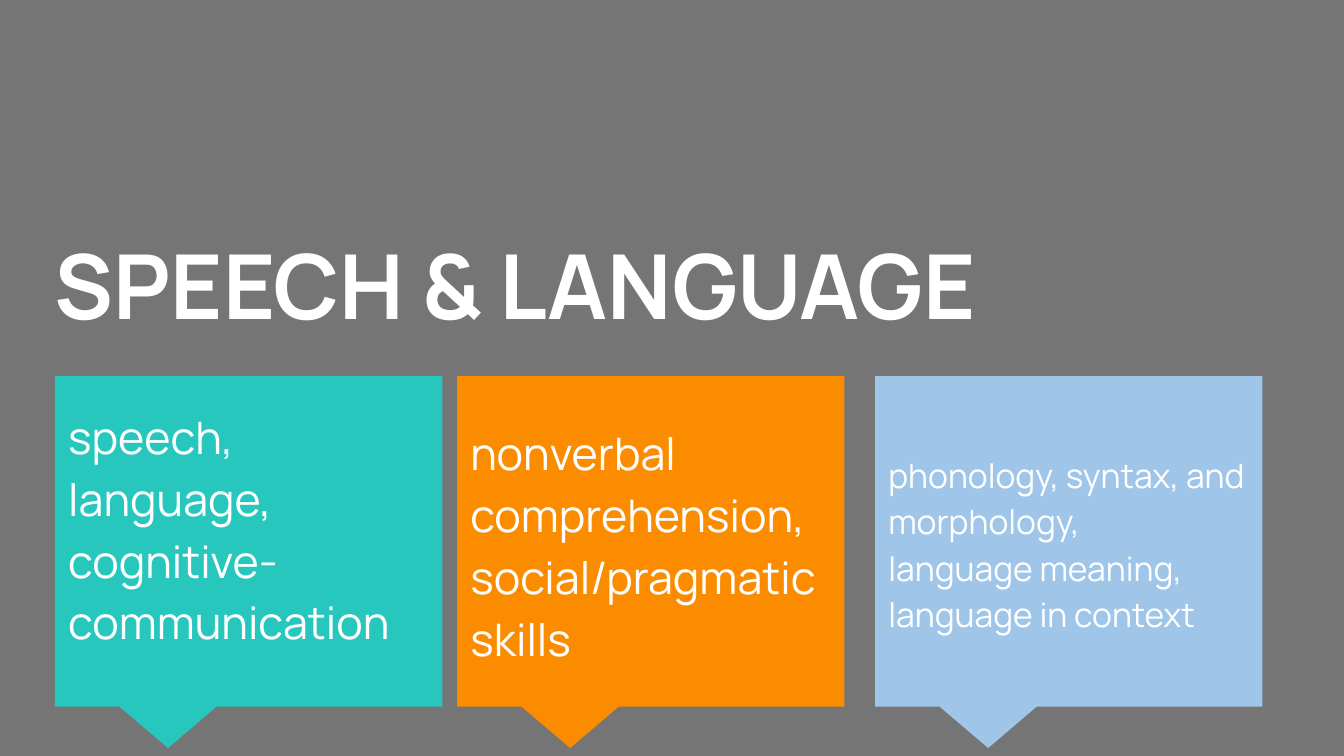
from pptx import Presentation
from pptx.dml.color import RGBColor
from pptx.enum.shapes import MSO_SHAPE as Shape
from pptx.enum.text import MSO_ANCHOR as Anchor, PP_ALIGN as Align
from pptx.util import Cm, Pt

# Content
FONT, WHITE, GRAY = "Manrope", "FFFFFF", "757575"
TITLE = "SPEECH & LANGUAGE"
# left (cm), fill, text size, bottom inset (cm), paragraphs
CALLOUTS = [
    (1.04, "27C7BD", 24, 0.86, ["speech, language, cognitive-communication"]),
    (8.64, "FB8C00", 24, 0.25, ["nonverbal comprehension, social/pragmatic skills"]),
    (16.54, "9FC5E8", 18, 0.25, ["phonology, syntax, and morphology,",
                                 "language meaning, language in context"]),
]
CALLOUT_TOP, CALLOUT_WIDTH, CALLOUT_HEIGHT = 7.11, 7.32, 6.25
POINTER = (-0.208, 0.625)
INSET = 0.25


def color(hex_string):
    return RGBColor.from_string(hex_string)


def write(shape, paragraphs, size, anchor, bold=False, spacing=1.0, bottom=INSET):
    frame = shape.text_frame
    frame.word_wrap = True
    frame.vertical_anchor = anchor
    frame.margin_left = frame.margin_right = frame.margin_top = Cm(INSET)
    frame.margin_bottom = Cm(bottom)
    for index, text in enumerate(paragraphs):
        paragraph = frame.add_paragraph() if index else frame.paragraphs[0]
        paragraph.alignment = Align.LEFT
        paragraph.line_spacing = spacing
        run = paragraph.add_run()
        run.text = text
        run.font.name = FONT
        run.font.size = Pt(size)
        run.font.bold = bold
        run.font.color.rgb = color(WHITE)


presentation = Presentation()
presentation.slide_width, presentation.slide_height = Cm(25.4), Cm(14.29)
slide = presentation.slides.add_slide(presentation.slide_layouts[6])
slide.background.fill.solid()
slide.background.fill.fore_color.rgb = color(GRAY)

# Title
title = slide.shapes.add_textbox(Cm(0.79), Cm(4.09), Cm(23.95), Cm(2.84))
write(title, [TITLE], 48, Anchor.TOP, bold=True)

# Callouts
for left, fill, size, bottom, paragraphs in CALLOUTS:
    callout = slide.shapes.add_shape(
        Shape.RECTANGULAR_CALLOUT, Cm(left), Cm(CALLOUT_TOP),
        Cm(CALLOUT_WIDTH), Cm(CALLOUT_HEIGHT))
    callout.adjustments[0], callout.adjustments[1] = POINTER
    callout.shadow.inherit = False
    callout.fill.solid()
    callout.fill.fore_color.rgb = color(fill)
    callout.line.fill.background()
    write(callout, paragraphs, size, Anchor.MIDDLE, spacing=1.15, bottom=bottom)

presentation.save("out.pptx")
